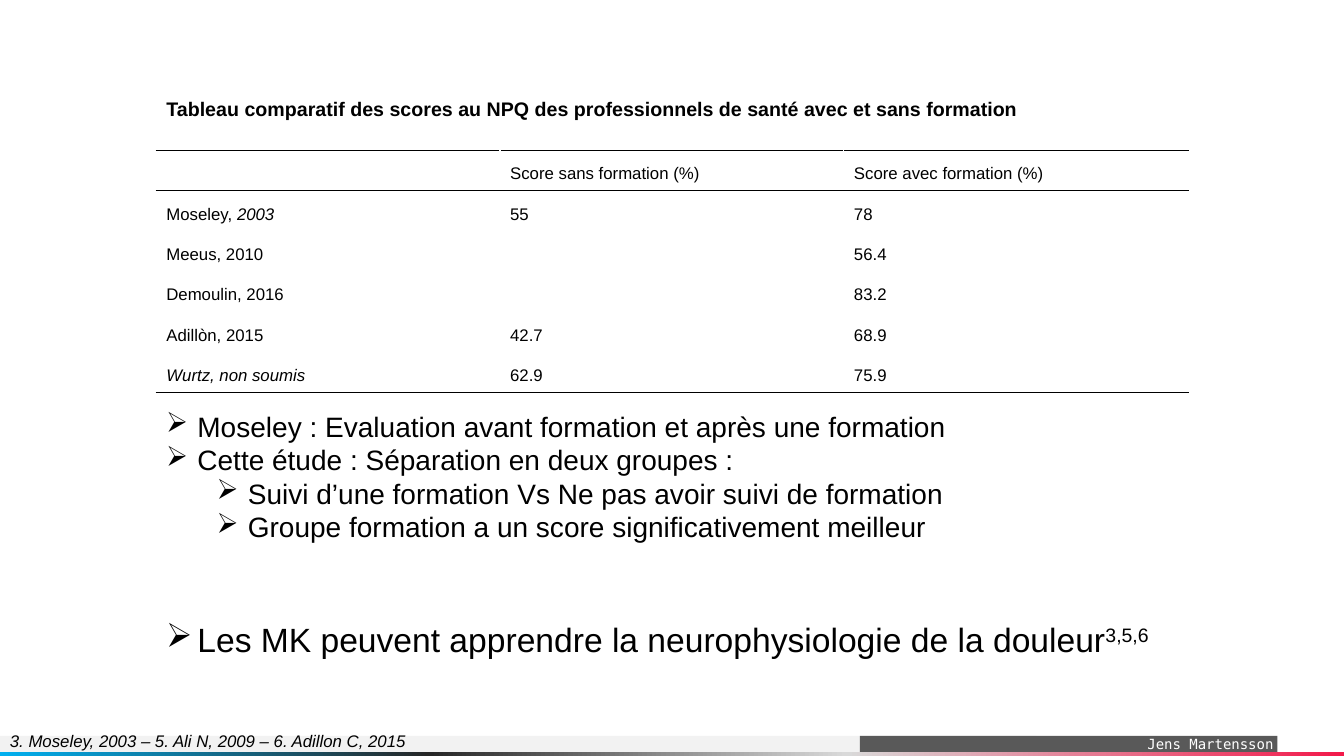
from lxml import etree
from pptx import Presentation
from pptx import util as u
from pptx.dml import color
from pptx.enum import shapes, text
from pptx.oxml import ns

COLORS = {"black": "000000", "white": "FFFFFF", "pale": "F2F2F2", "gray": "595959",
          "silver": "D9D9D9", "dark": "262626", "blue": "00B0F0", "red": "F2194A"}
STRIPE_STOPS = [(0, "blue"), (32, "dark"), (63, "silver"), (100, "red")]

TABLE_TITLE = "Tableau comparatif des scores au NPQ des professionnels de santé avec et sans formation"
# Each cell is a list of (text, italic) spans
SCORES = [
    [[], [("Score sans formation (%)", False)], [("Score avec formation (%)", False)]],
    [[("Moseley, ", False), ("2003", True)], [("55", False)], [("78", False)]],
    [[("Meeus, 2010", False)], [], [("56.4", False)]],
    [[("Demoulin, 2016", False)], [], [("83.2", False)]],
    [[("Adillòn, 2015", False)], [("42.7", False)], [("68.9", False)]],
    [[("Wurtz, non soumis", True)], [("62.9", False)], [("75.9", False)]],
]
# Text, indent level, size, space before
POINTS = [
    ("Moseley : Evaluation avant formation et après une formation", 0, 20, 0),
    ("Cette étude : Séparation en deux groupes :", 0, 20, 0),
    ("Suivi d’une formation Vs Ne pas avoir suivi de formation", 1, 20, 0),
    ("Groupe formation a un score significativement meilleur", 1, 20, 0),
    ("Les MK peuvent apprendre la neurophysiologie de la douleur", 0, 24, 54),
]


def rgb(name):
    return color.RGBColor.from_string(COLORS[name])


def add_xml(parent, tag, **attributes):
    return etree.SubElement(parent, ns.qn(tag), attributes)


def add_span(para, words, size=12, font="Arial", fill="black", bold=False, italic=False, raised=False):
    span = para.add_run()
    span.text = words
    span.font.size = u.Pt(size)
    span.font.name = font
    span.font.bold = bold
    span.font.italic = italic
    span.font.color.rgb = rgb(fill)
    if raised:
        span.font._element.set("baseline", "30000")
    return span


def add_bar(page, box, fill=None):
    bar = page.shapes.add_shape(shapes.MSO_SHAPE.RECTANGLE, *map(u.Inches, box))
    bar.shadow.inherit = False
    bar.line.fill.background()
    if fill:
        bar.fill.solid()
        bar.fill.fore_color.rgb = rgb(fill)
    return bar


def add_text_box(page, box):
    frame = page.shapes.add_textbox(*map(u.Inches, box)).text_frame
    frame.word_wrap = True
    return frame


def add_footer(page, left, top, width):
    add_bar(page, (left, top, 10.29, 0.16), "pale")

    # Author label
    frame = add_bar(page, (left + 8.54, top, 4.14, 0.16), "gray").text_frame
    frame.margin_left, frame.margin_right = u.Inches(0.1), u.Inches(0.04)
    frame.margin_top = frame.margin_bottom = 0
    frame.vertical_anchor = text.MSO_ANCHOR.BOTTOM
    para = frame.paragraphs[0]
    para.alignment = text.PP_ALIGN.RIGHT
    add_span(para, "Jens Martensson", size=10, font="DejaVu Sans Mono", fill="white")

    # Gradient stripe
    stripe = add_bar(page, (left, top + 0.16, width, 0.04))
    stripe.fill.gradient()
    stripe.fill.gradient_angle = 0
    stops = stripe._element.spPr.find(".//" + ns.qn("a:gsLst"))
    for stop in list(stops):
        stops.remove(stop)
    for position, name in STRIPE_STOPS:
        stop = add_xml(stops, "a:gs", pos=str(position * 1000))
        add_xml(stop, "a:srgbClr", val=COLORS[name])


def add_border(cell, side):
    line = add_xml(cell._tc.get_or_add_tcPr(), "a:" + side, w=str(u.Pt(1)))
    add_xml(add_xml(line, "a:solidFill"), "a:srgbClr", val=COLORS["black"])


def fill_cell(cell, spans, sides, size=12, bold=False):
    para = cell.text_frame.paragraphs[0]
    para.alignment = text.PP_ALIGN.JUSTIFY
    para.line_spacing = 1.5
    para.font.size = u.Pt(size)
    for words, italic in spans:
        add_span(para, words, size=size, bold=bold, italic=italic)
    for side in sides:
        add_border(cell, side)
    cell.fill.background()


def add_score_table(page, left, top, width):
    row_count = len(SCORES) + 1
    title_height, row_height = 0.67, 0.4
    height = title_height + row_height * len(SCORES)
    table = page.shapes.add_table(row_count, 3, *map(u.Inches, (left, top, width, height))).table
    table.first_row = table.horz_banding = False
    for column, column_width in zip(table.columns, (3.41, 3.41, width - 6.82)):
        column.width = u.Inches(column_width)
    for index, row in enumerate(table.rows):
        row.height = u.Inches(row_height if index else title_height)

    # Title row, then rules around the header and under the last row
    table.cell(0, 0).merge(table.cell(0, 2))
    rows = [[[(TABLE_TITLE, False)], [], []]] + SCORES
    borders = {0: ["lnB"], 1: ["lnT", "lnB"], 2: ["lnT"], row_count - 1: ["lnB"]}
    for r, row in enumerate(rows):
        for c, spans in enumerate(row):
            fill_cell(table.cell(r, c), spans, borders.get(r, []), size=12 if r else 14, bold=r == 0)


def add_points(page, box):
    frame = add_text_box(page, box)
    for index, (words, level, size, gap) in enumerate(POINTS):
        para = frame.add_paragraph() if index else frame.paragraphs[0]
        para.level = level
        para.space_before = u.Pt(gap)
        properties = para._p.get_or_add_pPr()
        properties.set("marL", str(u.Inches(0.31 + 0.5 * level)))
        properties.set("indent", str(u.Inches(-0.31)))
        add_xml(properties, "a:buChar", char="➢")
        add_span(para, words, size=size)
    add_span(para, "3,5,6", size=24, raised=True)


def add_references(page, box):
    frame = add_text_box(page, box)
    add_span(frame.paragraphs[0], "3. Moseley, 2003 – 5. Ali N, 2009 – 6. Adillon C, 2015", italic=True)


def main():
    deck = Presentation()
    deck.slide_width, deck.slide_height = u.Inches(13.33), u.Inches(7.5)
    page = deck.slides.add_slide(deck.slide_layouts[6])
    add_footer(page, -0.01, 7.3, 13.34)
    add_points(page, (1.55, 4.01, 10.24, 2.93))
    add_references(page, (0, 7.2, 4.96, 0.3))
    add_score_table(page, 1.55, 0.82, 10.24)
    deck.save("out.pptx")


if __name__ == "__main__":
    main()
